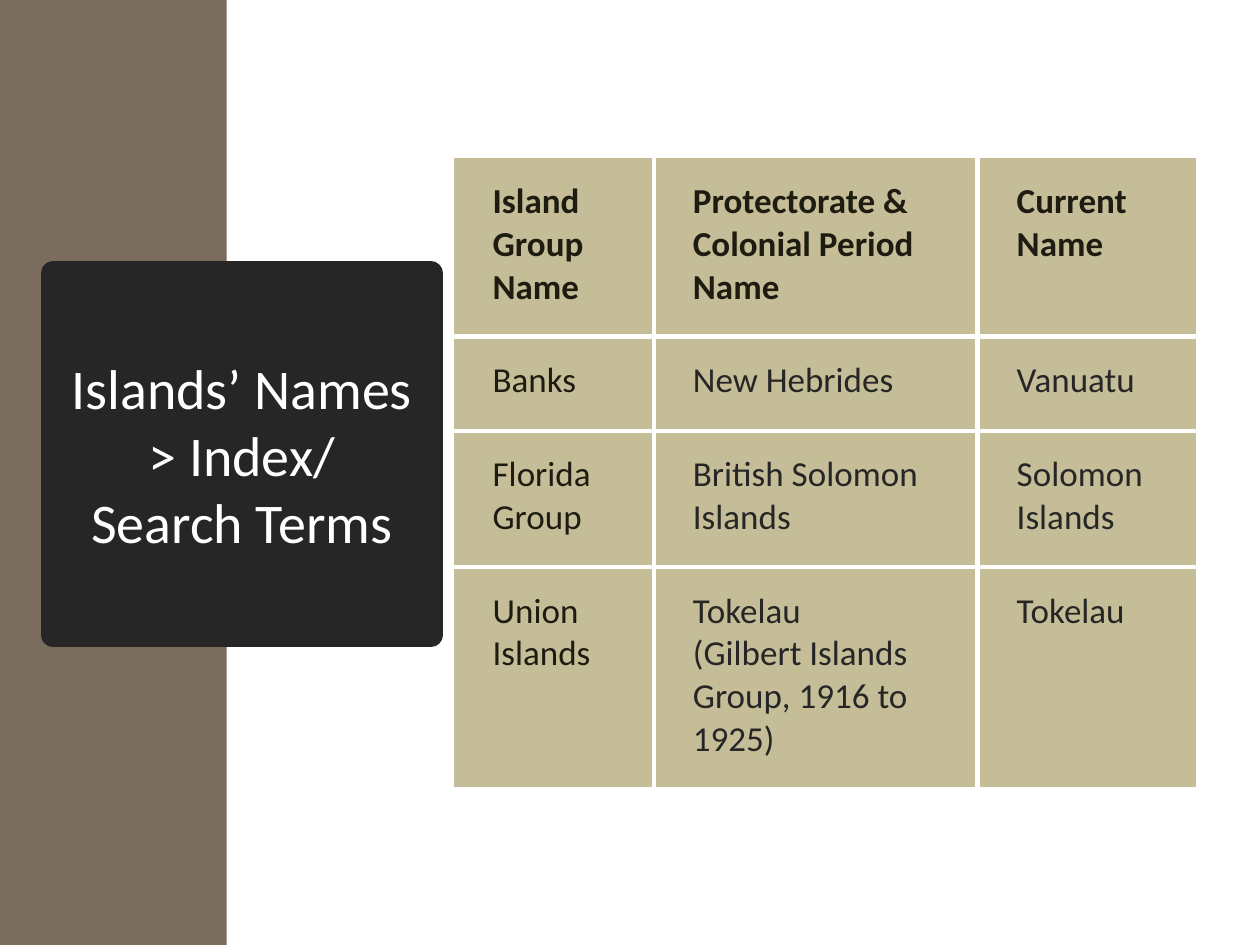
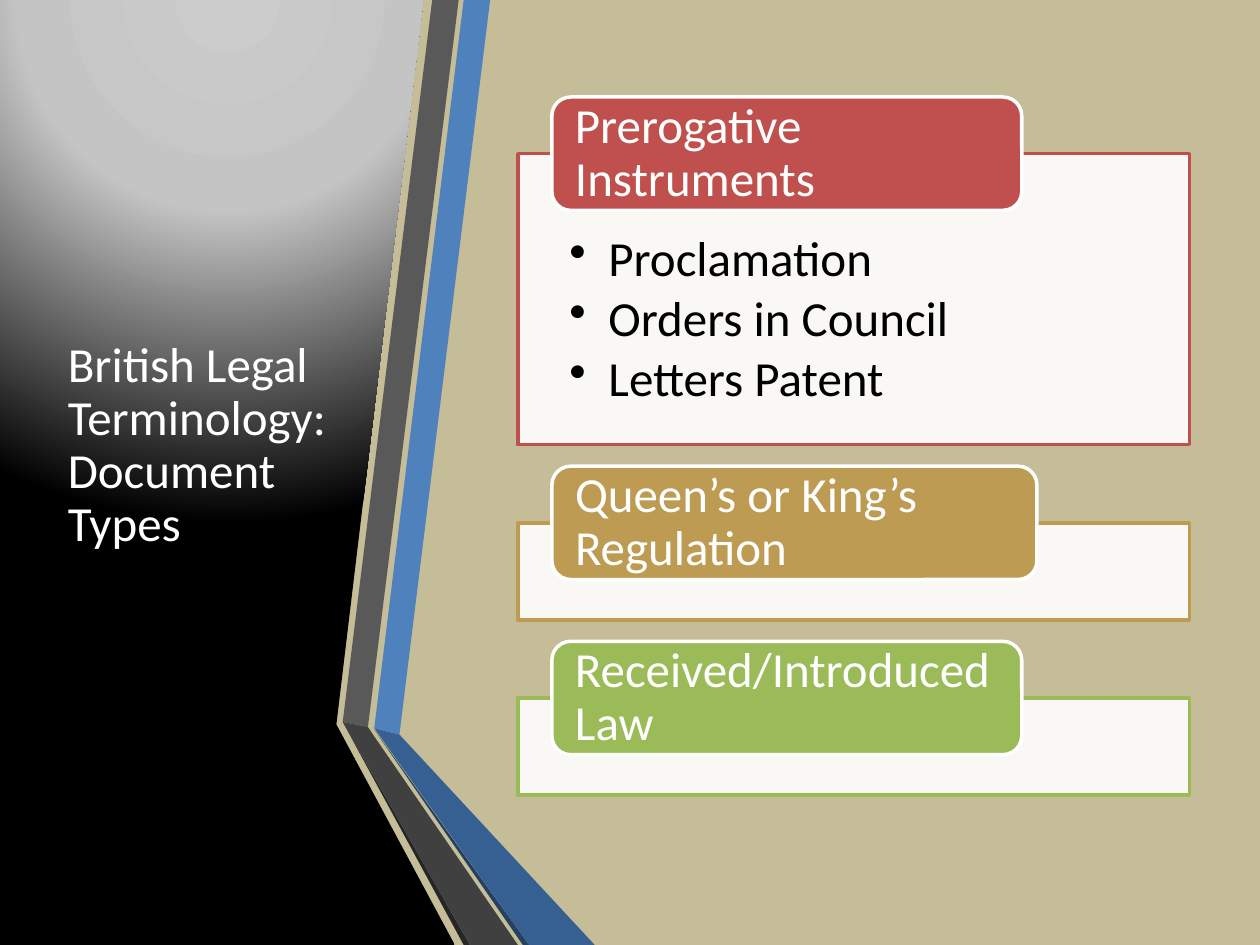
import dataclasses

import lxml.etree
import pptx
import pptx.dml.color
import pptx.enum.shapes
import pptx.enum.text
import pptx.oxml
import pptx.oxml.ns
import pptx.util


@dataclasses.dataclass(frozen=True)
class Theme:
    font: str = "Calibri"
    title_size: int = 32
    text_size: int = 28
    table_size: int = 20
    white: str = "FFFFFF"
    black: str = "000000"
    charcoal: str = "262626"
    olive: str = "1E1C11"
    sand: str = "C4BD97"
    taupe: str = "7A6D5D"
    red: str = "C0504D"
    gold: str = "BD9B53"
    green: str = "9BBB59"
    blue: str = "4F81BD"
    blue_shade: str = "376092"
    blue_edge: str = "254061"
    grey: str = "595959"
    grey_shade: str = "404040"
    glow: tuple = ((0, "CCCCCC"), (40, "C4C4C4"), (100, "000000"))


theme = Theme()
rgb = pptx.dml.color.RGBColor.from_string
qn = pptx.oxml.ns.qn
shapes = pptx.enum.shapes.MSO_SHAPE
anchors = pptx.enum.text.MSO_ANCHOR
aligns = pptx.enum.text.PP_ALIGN

# Grid of 100 columns and 75 rows of square cells
deck = pptx.Presentation()
deck.slide_width = pptx.util.Inches(10)
deck.slide_height = pptx.util.Inches(7.5)
unit = deck.slide_width // 100
blank = deck.slide_layouts[6]


def add_box(page, preset, area, fill, line=None, width=2):
    """Add a preset shape; area is left, top, width, height in grid cells."""
    box = page.shapes.add_shape(preset, *(round(unit * part) for part in area))
    box.shadow.inherit = False
    box.fill.solid()
    box.fill.fore_color.rgb = rgb(fill)
    if line:
        box.line.color.rgb = rgb(line)
        box.line.width = pptx.util.Pt(width)
    else:
        box.line.fill.background()
    return box


def write(holder, paragraphs, size, colour, insets=(1, 0.5, 1, 0.5), anchor=anchors.MIDDLE,
          align=aligns.LEFT, spacing=1, after=0, bold=False):
    """Fill a text frame or table cell; a newline in a paragraph is a line break."""
    for side, inset in zip(("left", "top", "right", "bottom"), insets):
        setattr(holder, f"margin_{side}", round(unit * inset))
    holder.vertical_anchor = anchor
    frame = getattr(holder, "text_frame", holder)
    for index, text in enumerate(paragraphs):
        para = frame.add_paragraph() if index else frame.paragraphs[0]
        para.alignment = align
        para.line_spacing = spacing
        para.space_after = pptx.util.Pt(after)
        for number, line in enumerate(text.split("\n")):
            if number:
                para.add_line_break()
            span = para.add_run()
            span.text = line
            span.font.name = theme.font
            span.font.size = pptx.util.Pt(size)
            span.font.bold = bold
            span.font.color.rgb = rgb(colour)


# Slide 1: island names
page = deck.slides.add_slide(blank)
add_box(page, shapes.RECTANGLE, (0, 0, 18, 75), theme.taupe)
title = add_box(page, shapes.RECTANGLE, (4.2, 21.7, 30, 28.7), theme.charcoal,
                theme.charcoal, 13.75)
lxml.etree.SubElement(title.line._get_or_add_ln(), qn("a:round"))
write(title.text_frame, ["Islands’ Names > Index/\nSearch Terms"], theme.title_size,
      theme.white, align=aligns.CENTER)

names = [
    [["Island Group Name"], ["Protectorate & Colonial Period Name"], ["Current Name"]],
    [["Banks"], ["New Hebrides"], ["Vanuatu"]],
    [["Florida Group"], ["British Solomon Islands"], ["Solomon Islands"]],
    [["Union Islands"], ["Tokelau", "(Gilbert Islands Group, 1916 to 1925)"], ["Tokelau"]],
]
column_widths = [15.9, 25.7, 17.3]
row_heights = [14.2, 7.5, 10.8, 17.5]
table = page.shapes.add_table(
    len(row_heights), len(column_widths), unit * 36, round(unit * 12.5),
    round(unit * sum(column_widths)), round(unit * sum(row_heights))).table
table.first_row = table.horz_banding = False
for column, width in zip(table.columns, column_widths):
    column.width = round(unit * width)
for row, height in zip(table.rows, row_heights):
    row.height = round(unit * height)

for r, row in enumerate(names):
    for c, paragraphs in enumerate(row):
        cell = table.cell(r, c)
        colour = theme.olive if r == 0 or c == 0 else theme.charcoal
        write(cell, paragraphs, theme.table_size, colour, (3.1, 1.8, 1.8, 1.8),
              anchors.TOP, bold=r == 0)
        properties = cell._tc.get_or_add_tcPr()
        inner = {"lnL": c > 0, "lnR": c < len(row) - 1,
                 "lnT": r > 0, "lnB": r < len(names) - 1}
        for side, visible in inner.items():
            edge = lxml.etree.SubElement(properties, qn(f"a:{side}"))
            edge.set("w", str(pptx.util.Pt(3)))
            paint = lxml.etree.SubElement(edge, qn("a:solidFill" if visible else "a:noFill"))
            if visible:
                lxml.etree.SubElement(paint, qn("a:srgbClr")).set("val", theme.white)
        cell.fill.solid()
        cell.fill.fore_color.rgb = rgb(theme.sand)

# Slide 2: document types
page = deck.slides.add_slide(blank)
page.background.fill.solid()
page.background.fill.fore_color.rgb = rgb(theme.sand)

panels = [
    (theme.black, [(26.4, 0), (33.6, 0), (26.7, 57.5), (36.1, 75), (0, 75), (0, 0)]),
    (theme.blue, [(29.7, 57.8), (31.7, 58.3), (38.9, 0), (36.8, 0)]),
    (theme.grey, [(36.4, 0), (34.3, 0), (27.2, 57.3), (29.2, 57.7)]),
    (theme.charcoal, [(27.2, 57.3), (36.8, 75), (37.3, 75)]),
    (theme.blue_edge, [(29.7, 57.9), (41.5, 75), (42, 75)]),
    (theme.blue_shade, [(29.7, 57.8), (42, 75), (47.2, 75), (31.7, 58.3)]),
    (theme.grey_shade, [(41.1, 75), (29.6, 58.3), (29.2, 57.7), (27.2, 57.3), (37.3, 75)]),
]
panel_shapes = []
for colour, corners in panels:
    points = [(round(unit * x), round(unit * y)) for x, y in corners]
    builder = page.shapes.build_freeform(*points[0], scale=1.0)
    builder.add_line_segments(points[1:], close=True)
    panel = builder.convert_to_shape()
    panel.shadow.inherit = False
    panel.fill.solid()
    panel.fill.fore_color.rgb = rgb(colour)
    panel.line.fill.background()
    panel_shapes.append(panel)

stops = "".join(f'<a:gs pos="{share * 1000}"><a:srgbClr val="{colour}"/></a:gs>'
                for share, colour in theme.glow)
gradient = pptx.oxml.parse_xml(
    f'<a:gradFill {pptx.oxml.ns.nsdecls("a")} rotWithShape="1"><a:gsLst>{stops}</a:gsLst>'
    '<a:path path="circle"><a:fillToRect l="50000" t="-80000" r="50000" b="180000"/></a:path>'
    '</a:gradFill>')
solid = panel_shapes[0]._element.spPr.find(qn("a:solidFill"))
solid.getparent().replace(solid, gradient)

title = page.shapes.add_textbox(*(round(unit * part) for part in (4.4, 7.5, 22.8, 55.8)))
title.text_frame.word_wrap = True
write(title.text_frame, ["British Legal Terminology:\nDocument Types"], theme.text_size,
      theme.white, spacing=0.9)

cards = [
    ("Prerogative Instruments", theme.red, 37.3, 23.1,
     ["Proclamation", "Orders in Council", "Letters Patent"]),
    ("Queen’s or King’s Regulation", theme.gold, 38.5, 7.7, []),
    ("Received/Introduced Law", theme.green, 37.3, 7.7, []),
]
card_gap = 6.2
top = 12.2
for heading, colour, heading_width, height, documents in cards:
    card = add_box(page, shapes.RECTANGLE, (41.1, top, 53.3, height), theme.white, colour)
    tint = card._element.spPr.find(qn("a:solidFill"))[0]
    lxml.etree.SubElement(tint, qn("a:alpha")).set("val", "90000")
    write(card.text_frame, documents, theme.text_size, theme.black, (4.1, 6.4, 4.1, 2.2),
          anchors.TOP, spacing=0.9, after=4)
    if documents:
        for para in card.text_frame.paragraphs:
            properties = para._p.get_or_add_pPr()
            properties.set("marL", str(round(unit * 3.1)))
            properties.set("indent", str(round(unit * -3.1)))
            lxml.etree.SubElement(properties, qn("a:buChar")).set("char", "•")
    label = add_box(page, shapes.ROUNDED_RECTANGLE, (43.8, top - 4.5, heading_width, 9),
                    colour, theme.white)
    write(label.text_frame, [heading], theme.text_size, theme.white, (1.4, 0, 1.4, 0),
          spacing=0.9)
    top += height + card_gap

deck.save("out.pptx")
